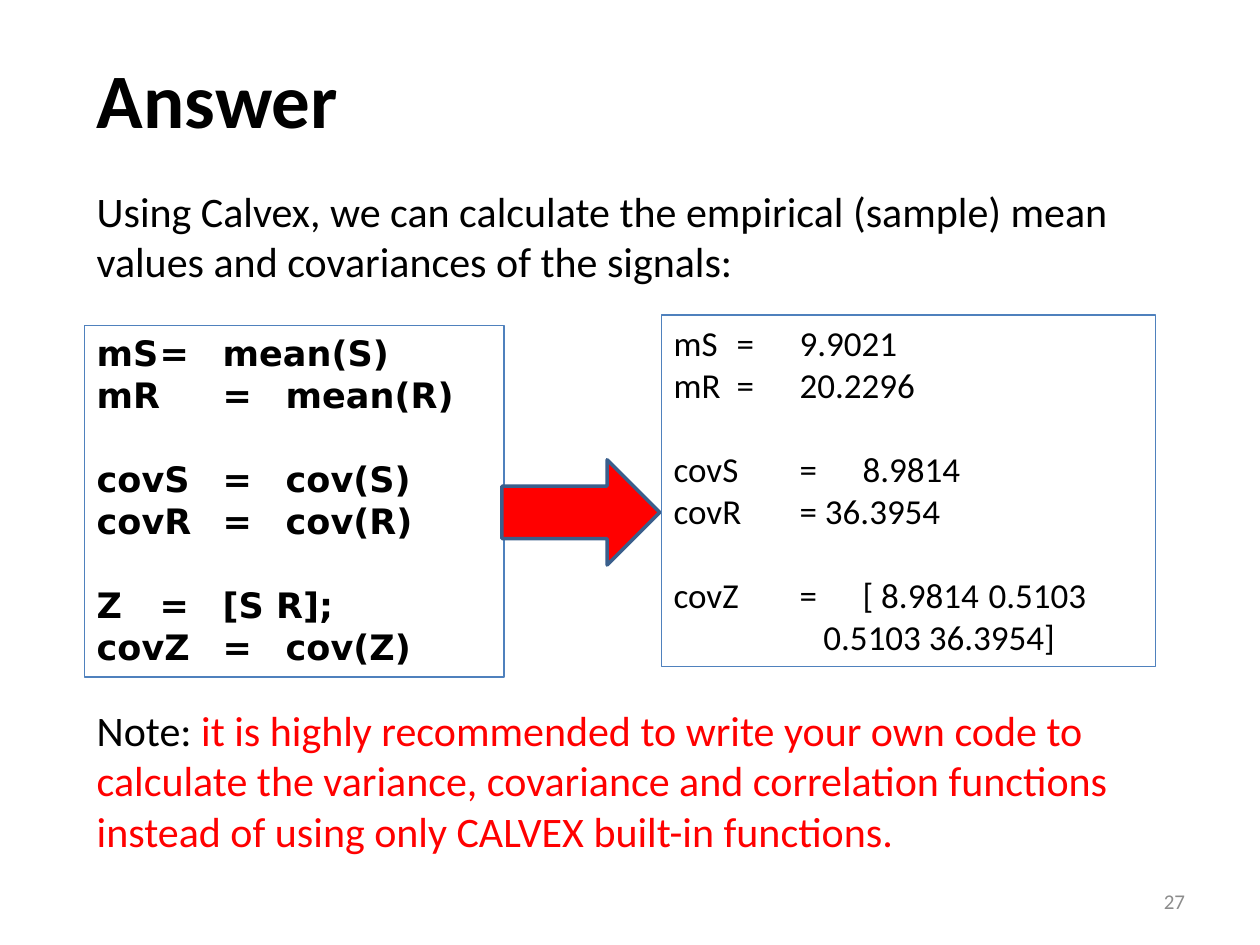
from dataclasses import dataclass

from lxml import etree
from pptx import Presentation
from pptx.dml.color import RGBColor
from pptx.enum.shapes import MSO_SHAPE
from pptx.enum.text import MSO_ANCHOR, PP_ALIGN
from pptx.oxml.ns import qn
from pptx.util import Cm, Pt

RECT = MSO_SHAPE.RECTANGLE
ARROW = MSO_SHAPE.RIGHT_ARROW
TOP = MSO_ANCHOR.TOP
MIDDLE = MSO_ANCHOR.MIDDLE
LEFT = PP_ALIGN.LEFT
RIGHT = PP_ALIGN.RIGHT

HUES = {
    "black": "000000",
    "white": "FFFFFF",
    "red": "FF0000",
    "blue": "4F81BD",
    "navy": "3A5F8C",
    "gray": "8C8C8C",
}
LINE = Pt(24)


@dataclass
class Row:
    text: str
    tabs: tuple[float, ...] = ()
    skip: int = 0
    indent: float = 0


@dataclass
class Panel:
    area: tuple[float, float, float, float]
    font: dict
    rows: list[Row]


CODE = Panel(
    (1.7, 6.56, 8.46, 7.09),
    {"name": "DejaVu Sans", "size": Pt(20), "bold": True},
    [
        Row("mS\t=\tmean(S)", (1.75, 2.8)),
        Row("mR\t=\tmean(R)", (1.79, 2.84)),
        Row("covS\t=\tcov(S)", (2.38, 3.43), 1),
        Row("covR\t=\tcov(R)", (2.42, 3.47)),
        Row("Z\t=\t[S R];", (0.99, 2.08), 1),
        Row("covZ\t=\tcov(Z)", (2.38, 3.43)),
    ],
)
RESULT = Panel(
    (13.33, 6.35, 9.96, 7.09),
    {"name": "Calibri", "size": Pt(20), "bold": False},
    [
        Row("mS\t=\t9.9021", (1.21, 2.04)),
        Row("mR\t=\t20.2296", (1.27, 1.94)),
        Row("covS\t=\t8.9814", (1.63, 2.28), 1),
        Row("covR\t= 36.3954", (1.67,)),
        Row("covZ\t=\t[ 8.9814\t0.5103", (1.63, 2.28, 5.26), 1),
        Row("0.5103 36.3954]", indent=3.02),
    ],
)


def tint(hue: str) -> RGBColor:
    return RGBColor.from_string(HUES[hue])


def style(item, form: dict) -> None:
    for key, value in form.items():
        setattr(item, key, value)


def place(item, area: tuple) -> None:
    keys = ("left", "top", "width", "height")
    style(item, dict(zip(keys, map(Cm, area))))


def write(para, text: str, font: dict, hue: str) -> None:
    run = para.add_run()
    run.text = text
    style(run.font, font)
    run.font.color.rgb = tint(hue)


def draw(slide, kind, area: tuple, fill: str, line: str, width: float):
    shape = slide.shapes.add_shape(kind, *map(Cm, area))
    shape.shadow.inherit = False
    shape.fill.solid()
    shape.fill.fore_color.rgb = tint(fill)
    shape.line.color.rgb = tint(line)
    shape.line.width = Pt(width)
    return shape


def add_text(slide, area: tuple, anchor):
    frame = slide.shapes.add_textbox(*map(Cm, area)).text_frame
    style(frame, {"word_wrap": True, "vertical_anchor": anchor})
    return frame


def set_tabs(para, row: Row) -> None:
    props = para._p.get_or_add_pPr()
    props.set("marL", str(Cm(row.indent)))
    props.set("indent", "0")
    if row.tabs:
        stops = etree.SubElement(props, qn("a:tabLst"))
        for stop in row.tabs:
            etree.SubElement(stops, qn("a:tab"), pos=str(Cm(stop)), algn="l")


def add_panel(slide, panel: Panel) -> None:
    frame = draw(slide, RECT, panel.area, "white", "blue", 0.75).text_frame
    style(frame, {"word_wrap": True, "vertical_anchor": TOP})
    for num, row in enumerate(panel.rows):
        para = frame.add_paragraph() if num else frame.paragraphs[0]
        style(para, {
            "alignment": LEFT,
            "line_spacing": LINE,
            "space_before": LINE * row.skip,
        })
        set_tabs(para, row)
        write(para, row.text, panel.font, "black")


def add_title(slide) -> None:
    title = slide.shapes.title
    place(title, (1.7, 0.84, 22.86, 2.24))
    title.fill.solid()
    title.fill.fore_color.rgb = tint("white")
    title.text_frame.vertical_anchor = MIDDLE
    para = title.text_frame.paragraphs[0]
    para.alignment = LEFT
    write(para, "Answer", {"name": "Calibri", "size": Pt(44), "bold": True}, "black")


def add_body(slide) -> None:
    font = {"name": "Calibri", "size": Pt(24)}
    frame = add_text(slide, (1.7, 3.61, 21.59, 14.4), TOP)
    write(
        frame.paragraphs[0],
        "Using Calvex, we can calculate the empirical (sample) mean "
        "values and covariances of the signals:",
        font, "black",
    )
    note = frame.add_paragraph()
    note.space_before = Pt(239)
    write(note, "Note: ", font, "black")
    write(
        note,
        "it is highly recommended to write your own code to calculate the "
        "variance, covariance and correlation functions instead of using "
        "only CALVEX built-in functions.",
        font, "red",
    )


def add_number(slide) -> None:
    para = add_text(slide, (18.21, 17.65, 5.93, 1.02), MIDDLE).paragraphs[0]
    para.alignment = RIGHT
    write(para, "27", {"name": "Calibri", "size": Pt(12)}, "gray")


def main() -> None:
    deck = Presentation()
    style(deck, {"slide_width": Cm(25.4), "slide_height": Cm(19.05)})
    slide = deck.slides.add_slide(deck.slide_layouts[5])
    add_title(slide)
    add_body(slide)
    for panel in (RESULT, CODE):
        add_panel(slide, panel)
    draw(slide, ARROW, (10.12, 9.27, 3.18, 2.12), "red", "navy", 2)
    add_number(slide)
    deck.save("out.pptx")


if __name__ == "__main__":
    main()
